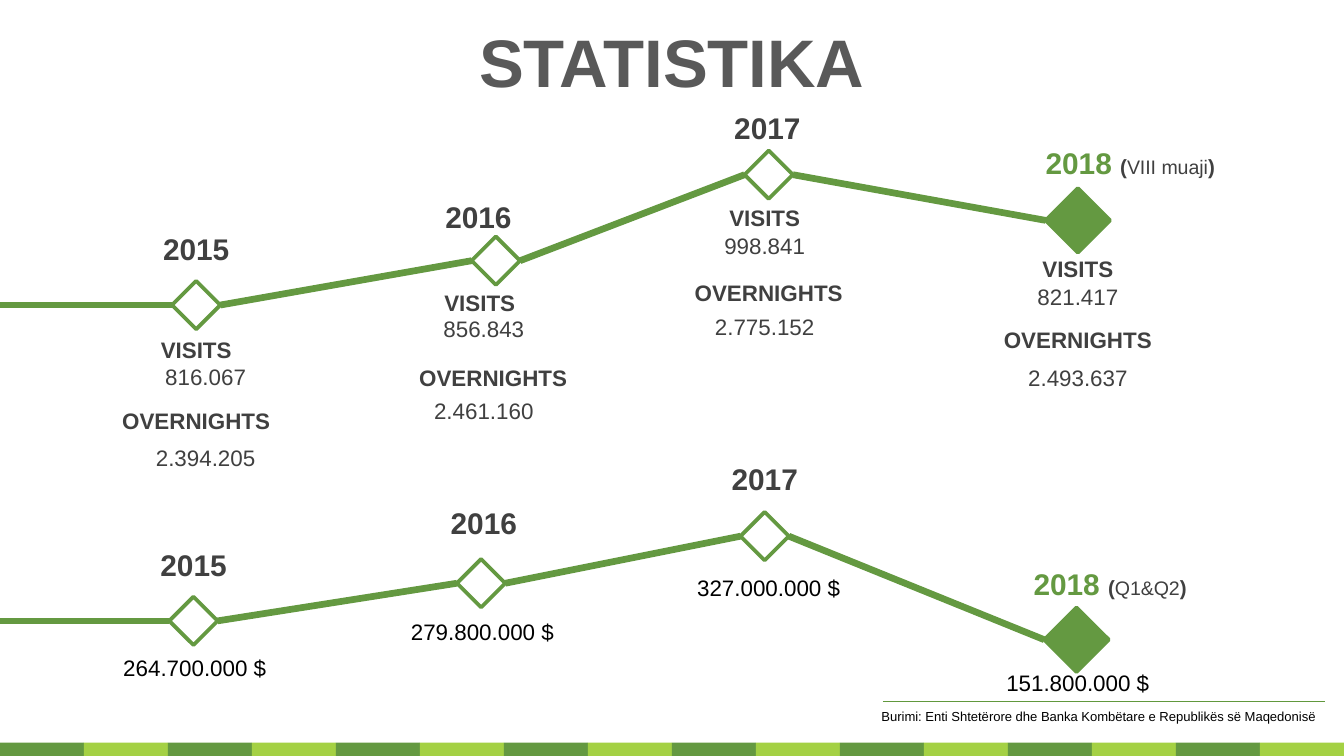
from lxml import etree
from pptx import Presentation
from pptx.dml.color import RGBColor
from pptx.enum.shapes import MSO_CONNECTOR, MSO_SHAPE
from pptx.enum.text import MSO_ANCHOR, PP_ALIGN
from pptx.oxml.ns import qn
from pptx.util import Inches, Pt

RECT, DIAMOND = MSO_SHAPE.RECTANGLE, MSO_SHAPE.DIAMOND
STRAIGHT = MSO_CONNECTOR.STRAIGHT
CENTER, LEFT = PP_ALIGN.CENTER, PP_ALIGN.LEFT
MIDDLE = MSO_ANCHOR.MIDDLE

GREEN = RGBColor(0x64, 0x99, 0x41)
LIME = RGBColor(0xA4, 0xD1, 0x44)
RULE = RGBColor(0x61, 0x98, 0x3D)
TITLE = RGBColor(0x59, 0x59, 0x59)
DARK = RGBColor(0x40, 0x40, 0x40)
BLACK = RGBColor(0, 0, 0)
WHITE = RGBColor(0xFF, 0xFF, 0xFF)

W = 10
H = W * 9 / 16
COLS = 10
LEFT_SIDE, RIGHT_SIDE = 1, 3

# Marker: column and row in the box. Labels: offsets from the marker's centre.
VISITORS = [
    dict(at=(1.46, 0.97), year="2015", year_at=(0, -0.42),
         visits="816.067", nights="2.394.205",
         visits_at=(0, 0.33), values_at=(0.07, 0.83), nights_at=(0, 0.86)),
    dict(at=(3.69, 0.64), year="2016", year_at=(-0.13, -0.33),
         visits="856.843", nights="2.461.160",
         visits_at=(-0.12, 0.31), values_at=(-0.09, 0.81), nights_at=(-0.02, 0.87)),
    dict(at=(5.72, 0), year="2017", year_at=(-0.01, -0.35),
         visits="998.841", nights="2.775.152",
         visits_at=(-0.03, 0.32), values_at=(-0.03, 0.83), nights_at=(0, 0.88)),
    dict(at=(8.02, 0.34), year="2018", year_at=(0.39, -0.43), period="VIII muaji",
         visits="821.417", nights="2.493.637",
         visits_at=(0, 0.36), values_at=(0, 0.87), nights_at=(0, 0.89)),
]
INCOME = [
    dict(at=(1.44, 0.63), year="2015", year_at=(0, -0.42),
         amount="264.700.000 $", amount_at=(0.01, 0.35)),
    dict(at=(3.58, 0.35), year="2016", year_at=(0.02, -0.45),
         amount="279.800.000 $", amount_at=(0.01, 0.36)),
    dict(at=(5.69, 0), year="2017", year_at=(0, -0.43),
         amount="327.000.000 $", amount_at=(0.03, 0.38)),
    dict(at=(8.01, 0.77), year="2018", year_at=(0.25, -0.42), period="Q1&Q2",
         amount="151.800.000 $", amount_at=(0.01, 0.32)),
]


def style(font, size, color, bold=False):
    font.name, font.size, font.bold = "Arial", Pt(size), bold
    font.color.rgb = color


def add_text(s, box, lines, size, color, bold=False, align=CENTER, wrap=True):
    tf = s.shapes.add_textbox(*map(Inches, box)).text_frame
    tf.word_wrap, tf.vertical_anchor = wrap, MIDDLE
    tf.text = "\n".join(lines)
    for p in tf.paragraphs:
        p.alignment = align
        for r in p.runs:
            style(r.font, size, color, bold)
    return tf


def add_label(s, center, offset, size, *args, **kwargs):
    """Text box centred at an offset from a marker's centre."""
    x, y = (c + d for c, d in zip(center, offset))
    w, h = size
    return add_text(s, (x - w / 2, y - h / 2, w, h), *args, **kwargs)


def add_line(s, start, end, color, width):
    line = s.shapes.add_connector(STRAIGHT, *map(Inches, start + end))
    line.line.color.rgb, line.line.width = color, Pt(width)
    etree.SubElement(line._element.spPr, qn("a:effectLst"))
    return line


def add_filled(s, kind, box, color):
    sp = s.shapes.add_shape(kind, *map(Inches, box))
    sp.shadow.inherit = False
    sp.fill.solid()
    sp.fill.fore_color.rgb = color
    sp.line.fill.background()
    return sp


def add_marker(s, center, current):
    size = 0.48 if current else 0.36
    x, y = center
    sp = add_filled(s, DIAMOND, (x - size / 2, y - size / 2, size, size),
                    GREEN if current else WHITE)
    sp.line.color.rgb, sp.line.width = GREEN, Pt(2)
    return sp


def add_year(s, center, point):
    period = point.get("period")
    year = point["year"] + " " if period else point["year"]
    tf = add_label(s, center, point["year_at"], (1.99 if period else 0.73, 0.37),
                   [year], 16, GREEN if period else DARK, bold=True)
    if period:
        p = tf.paragraphs[0]
        for text, size, bold in (("(", 11, True), (period, 10.5, False), (")", 11, True)):
            r = p.add_run()
            r.text = text
            style(r.font, size, DARK, bold)


def add_timeline(s, box, points, add_details):
    left, top, width, height = box
    previous = None
    for point in points:
        col, row = point["at"]
        center = (left + col * width / COLS, top + row * height)
        marker = add_marker(s, center, "period" in point)
        line = add_line(s, (left, center[1]), center, GREEN, 3.6)
        if previous is not None:
            line.begin_connect(previous, RIGHT_SIDE)
        line.end_connect(marker, LEFT_SIDE)
        previous = marker
        add_year(s, center, point)
        add_details(s, center, point)


def add_visitor_details(s, center, point):
    for text, key in (("VISITS", "visits_at"), ("OVERNIGHTS", "nights_at")):
        add_label(s, center, point[key], (1.71, 0.3), [text], 12, DARK, bold=True)
    tf = add_label(s, center, point["values_at"], (1.69, 0.91),
                   [point["visits"], point["nights"]], 12, DARK)
    tf.paragraphs[1].space_before = Pt(29)


def add_income_details(s, center, point):
    add_label(s, center, point["amount_at"], (1.27, 0.3), [point["amount"]],
              12, BLACK, wrap=False)


def add_source(s, box):
    x, y, w, h = box
    add_line(s, (x + 0.11, y), (x + w - 0.05, y), RULE, 1)
    add_text(s, box, ["Burimi: Enti Shtetërore dhe Banka Kombëtare e Republikës së Maqedonisë"],
             7, BLACK, align=LEFT, wrap=False)


def add_footer_band(s, box, count=16):
    x, y, w, h = box
    step = w / count
    for i in range(count):
        add_filled(s, RECT, (x + i * step, y, step, h), LIME if i % 2 else GREEN)


def main():
    prs = Presentation()
    prs.slide_width, prs.slide_height = Inches(W), Inches(H)
    s = prs.slides.add_slide(prs.slide_layouts[6])
    add_footer_band(s, (0, H - 0.1, W, 0.1))
    add_text(s, (0, 0.14, W, 0.63), ["STATISTIKA"], 36, TITLE, bold=True)
    add_timeline(s, (0, 1.3, W, 1), VISITORS, add_visitor_details)
    add_timeline(s, (0, 3.99, W, 1), INCOME, add_income_details)
    add_source(s, (6.46, 5.22, 3.45, 0.22))
    prs.save("out.pptx")


if __name__ == "__main__":
    main()
